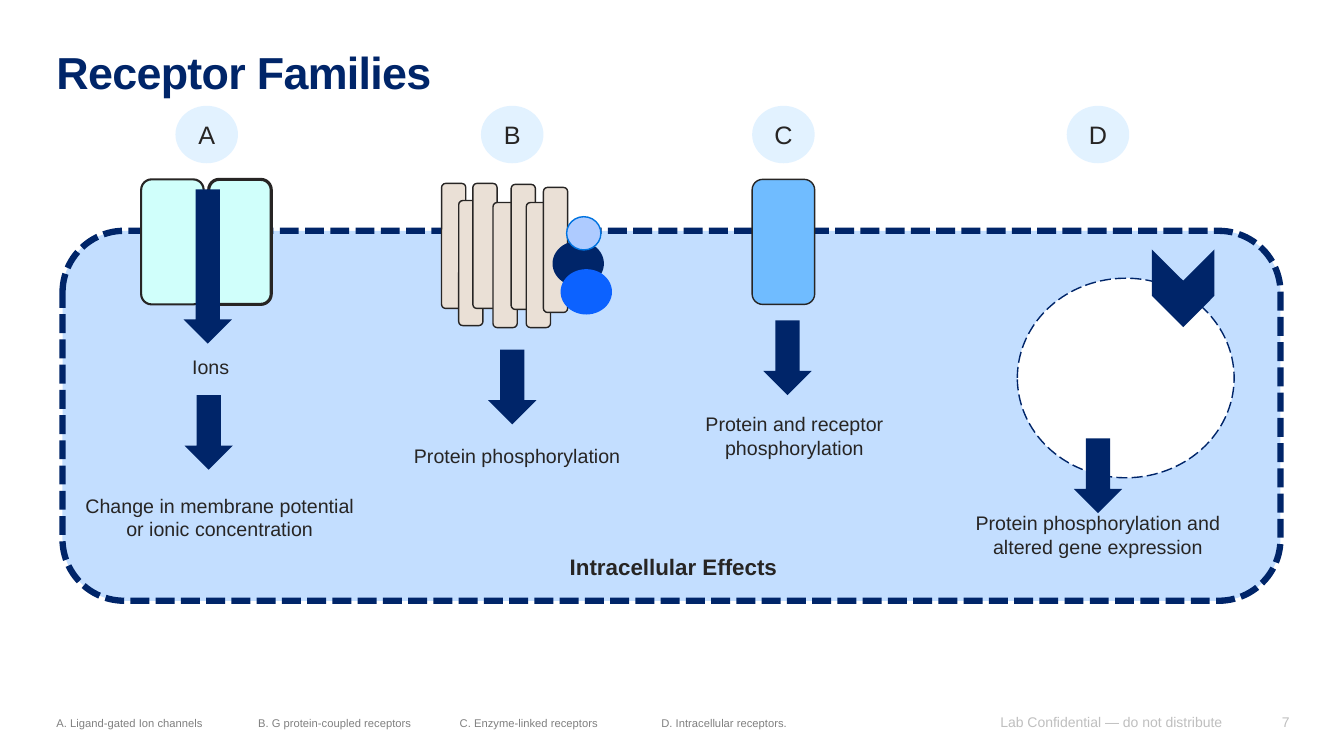
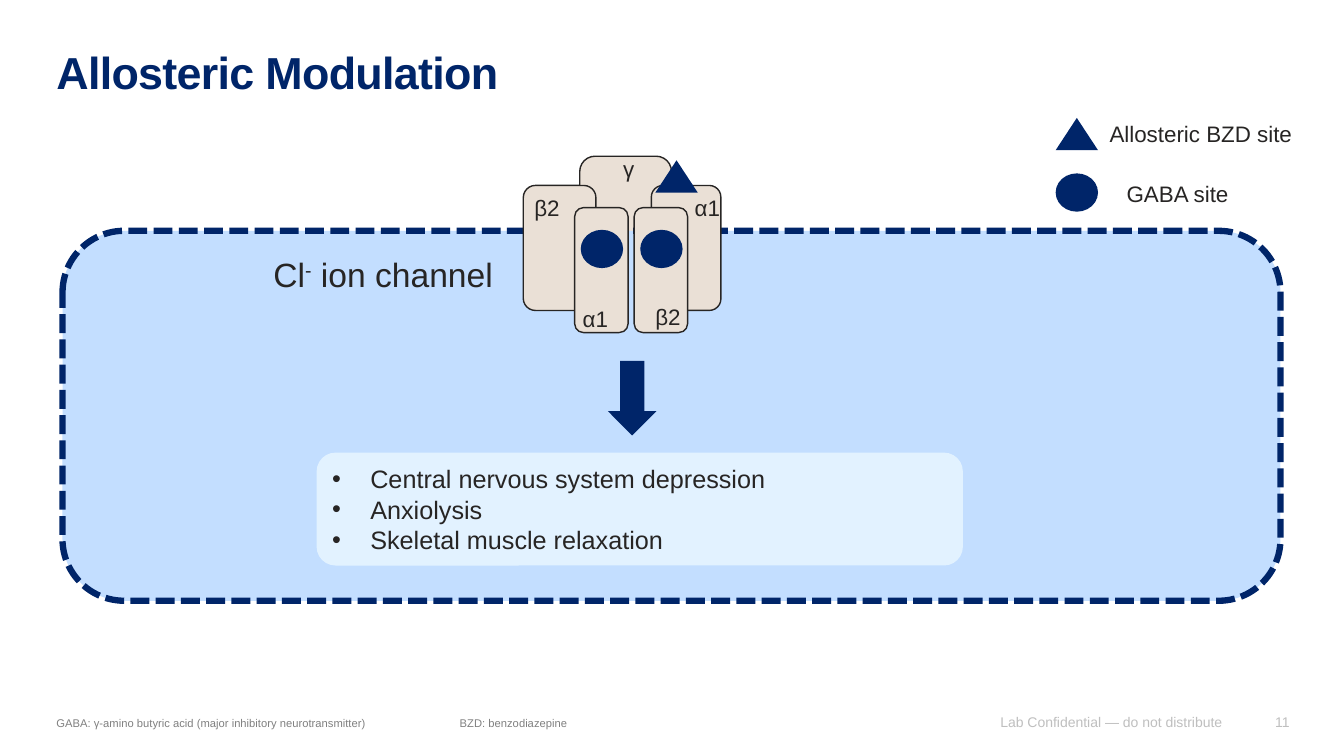
from dataclasses import dataclass

from lxml import etree
from pptx import Presentation
from pptx.dml.color import RGBColor
from pptx.enum import dml, shapes, text
from pptx.oxml import ns
from pptx.util import Inches, Pt

SHAPE = shapes.MSO_SHAPE
ALIGN = text.PP_ALIGN
ANCHOR = text.MSO_ANCHOR
DASH = dml.MSO_LINE


@dataclass(frozen=True)
class Theme:
    font: str = "Arial"
    navy: str = "002569"
    ink: str = "272524"
    cell: str = "C3DEFF"
    pale: str = "E2F2FF"
    beige: str = "EAE0D6"
    mint: str = "D0FFFB"
    sky: str = "70BCFF"
    blue: str = "0C62FF"
    periwinkle: str = "AECBFF"
    azure: str = "0073E0"
    white: str = "FFFFFF"
    note: str = "808080"
    footer: str = "BFBFBF"
    title_size: int = 32
    channel_size: int = 24
    body_size: int = 18
    label_size: int = 16
    effect_size: int = 14
    footer_size: int = 10
    note_size: int = 8


THEME = Theme()
SUBUNIT_HEIGHT = 1.24
CONFIDENTIAL = "Lab Confidential — do not distribute"


def rgb(value):
    return RGBColor.from_string(value)


def style_paragraph(paragraph, size, color=THEME.ink, align=ALIGN.LEFT, bold=False):
    paragraph.alignment = align
    font = paragraph.font
    font.name = THEME.font
    font.size = Pt(size)
    font.bold = bold
    font.color.rgb = rgb(color)


def add_part(slide, kind, left, top, width, height, fill, line=None, weight=1, dash=None):
    part = slide.shapes.add_shape(
        kind, Inches(left), Inches(top), Inches(width), Inches(height))
    part.shadow.inherit = False
    part.fill.solid()
    part.fill.fore_color.rgb = rgb(fill)
    if line is None:
        part.line.fill.background()
    else:
        part.line.color.rgb = rgb(line)
        part.line.width = Pt(weight)
        if dash is not None:
            part.line.dash_style = dash
    return part


def add_text(slide, left, top, width, height, words, size, color=THEME.ink,
             align=ALIGN.CENTER, bold=False, anchor=ANCHOR.TOP, inset=True):
    frame = slide.shapes.add_textbox(
        Inches(left), Inches(top), Inches(width), Inches(height)).text_frame
    frame.word_wrap = True
    frame.vertical_anchor = anchor
    if not inset:
        frame.margin_left = frame.margin_right = 0
        frame.margin_top = frame.margin_bottom = 0
    paragraph = frame.paragraphs[0]
    if words:
        paragraph.add_run().text = words
    style_paragraph(paragraph, size, color, align, bold)
    return paragraph


def add_title(slide, words):
    title = add_text(slide, 0.56, 0.5, 12.23, 1, words, THEME.title_size,
                     THEME.navy, ALIGN.LEFT, bold=True, inset=False)
    title.line_spacing = 0.9
    title.runs[0].font._element.set("spc", "-50")


def add_notes_line(slide, entries):
    left = 0.56
    note = add_text(slide, left, 6.97, 8.1, 0.27, "", THEME.note_size,
                    THEME.note, ALIGN.LEFT, anchor=ANCHOR.BOTTOM, inset=False)
    note.space_after = Pt(6)
    properties = note._p.get_or_add_pPr()
    tabs = etree.Element(ns.qn("a:tabLst"))
    for stop in (2, 4, 6):
        etree.SubElement(tabs, ns.qn("a:tab"), pos=str(Inches(stop)), algn="l")
    properties.find(ns.qn("a:defRPr")).addprevious(tabs)
    note.add_run().text = entries


def add_frame(slide, title, number, entries):
    for left, width, words in ((12.29, 0.5, number), (9.67, 2.45, CONFIDENTIAL)):
        add_text(slide, left, 6.98, width, 0.27, words, THEME.footer_size,
                 THEME.footer, ALIGN.RIGHT, anchor=ANCHOR.BOTTOM, inset=False)
    add_notes_line(slide, entries)
    add_title(slide, title)
    add_part(slide, SHAPE.ROUNDED_RECTANGLE, 0.62, 2.29, 12.08, 3.67,
             THEME.cell, THEME.navy, 4.5, DASH.SQUARE_DOT)


def add_subunit(slide, left, top, width, fill=THEME.beige, weight=1):
    add_part(slide, SHAPE.ROUNDED_RECTANGLE, left, top, width, SUBUNIT_HEIGHT,
             fill, THEME.ink, weight)


def add_arrow(slide, left, top, height=0.74):
    add_part(slide, SHAPE.DOWN_ARROW, left, top, 0.48, height, THEME.navy)


def add_effect(slide, center, top, words):
    width = 2.9
    add_text(slide, center - width / 2, top, width, 0.57, words, THEME.effect_size)


def add_badge(slide, left, letter):
    badge = add_part(slide, SHAPE.OVAL, left, 1.05, 0.62, 0.57, THEME.pale)
    frame = badge.text_frame
    frame.vertical_anchor = ANCHOR.MIDDLE
    frame.paragraphs[0].add_run().text = letter
    style_paragraph(frame.paragraphs[0], THEME.body_size, align=ALIGN.CENTER)


def add_bullets(slide, left, top, width, height, items):
    panel = add_part(slide, SHAPE.ROUNDED_RECTANGLE, left, top, width, height, THEME.pale)
    frame = panel.text_frame
    frame.word_wrap = True
    frame.vertical_anchor = ANCHOR.MIDDLE
    for index, item in enumerate(items):
        paragraph = frame.add_paragraph() if index else frame.paragraphs[0]
        properties = paragraph._p.get_or_add_pPr()
        properties.set("marL", str(Inches(0.38)))
        properties.set("indent", str(Inches(-0.38)))
        etree.SubElement(properties, ns.qn("a:buFont"), typeface=THEME.font)
        etree.SubElement(properties, ns.qn("a:buChar"), char="•")
        paragraph.add_run().text = item
        style_paragraph(paragraph, THEME.body_size)


def add_bzd_site(slide, left, top):
    add_part(slide, SHAPE.ISOSCELES_TRIANGLE, left, top, 0.42, 0.32, THEME.navy)


def add_gaba_site(slide, left, top):
    add_part(slide, SHAPE.OVAL, left, top, 0.42, 0.38, THEME.navy)


def add_g_protein_receptor(slide):
    helices = ((4.38, 1.82), (4.55, 1.99), (4.69, 1.82), (4.89, 2.01),
               (5.07, 1.83), (5.22, 2.01), (5.39, 1.86))
    for left, top in helices:
        add_subunit(slide, left, top, 0.24)
    add_part(slide, SHAPE.OVAL, 5.48, 2.39, 0.51, 0.45, THEME.navy)
    add_part(slide, SHAPE.OVAL, 5.56, 2.67, 0.51, 0.45, THEME.blue)
    add_part(slide, SHAPE.OVAL, 5.62, 2.15, 0.34, 0.33, THEME.periwinkle, THEME.azure)


def build_receptor_families(slide):
    add_frame(slide, "Receptor Families", "7",
              "A. Ligand-gated Ion channels\tB. G protein-coupled receptors"
              "\tC. Enzyme-linked receptors\tD. Intracellular receptors.")
    add_subunit(slide, 1.4, 1.78, 0.62, THEME.mint, 1.5)
    add_subunit(slide, 2.07, 1.78, 0.62, THEME.mint, 2.25)
    add_subunit(slide, 7.46, 1.78, 0.62, THEME.sky)
    add_g_protein_receptor(slide)
    add_part(slide, SHAPE.OVAL, 10.09, 2.76, 2.15, 1.98, THEME.white,
             THEME.navy, 1, DASH.LONG_DASH)
    ligand = add_part(slide, SHAPE.CHEVRON, 11.35, 2.55, 0.77, 0.62, THEME.navy)
    ligand.rotation = 90

    add_arrow(slide, 1.82, 1.88, 1.53)
    for left, top in ((1.83, 3.92), (4.84, 3.47), (7.57, 3.18), (10.65, 4.35)):
        add_arrow(slide, left, top)
    for left, letter in zip((1.74, 4.77, 7.46, 10.58), "ABCD"):
        add_badge(slide, left, letter)
    effects = (
        (2.09, 3.47, "Ions"),
        (2.18, 4.85, "Change in membrane potential or ionic concentration"),
        (5.13, 4.35, "Protein phosphorylation"),
        (7.88, 4.04, "Protein and receptor phosphorylation"),
        (10.89, 5.02, "Protein phosphorylation and altered gene expression"),
    )
    for center, top, words in effects:
        add_effect(slide, center, top, words)
    add_text(slide, 4.83, 5.44, 3.7, 0.37, "Intracellular Effects",
             THEME.label_size, bold=True)


def build_allosteric_modulation(slide):
    add_subunit(slide, 5.75, 1.55, 0.91)
    add_frame(slide, "Allosteric Modulation", "11",
              "GABA: γ-amino butyric acid (major inhibitory neurotransmitter)"
              "\tBZD: benzodiazepine")
    for left, top, width in ((5.19, 1.84, 0.72), (5.7, 2.06, 0.53),
                             (6.46, 1.84, 0.69), (6.29, 2.06, 0.53)):
        add_subunit(slide, left, top, width)
    add_arrow(slide, 6.03, 3.58)

    channel = add_text(slide, 2.37, 2.47, 2.86, 0.5, "Cl", THEME.channel_size)
    charge = channel.add_run()
    charge.text = "-"
    charge.font._element.set("baseline", "30000")
    channel.add_run().text = " ion channel"

    for left, top in ((6.5, 1.59), (10.47, 1.17)):
        add_bzd_site(slide, left, top)
    for left, top in ((6.35, 2.28), (5.76, 2.28), (10.47, 1.72)):
        add_gaba_site(slide, left, top)
    add_bullets(slide, 3.14, 4.49, 6.41, 1.12,
                ("Central nervous system depression", "Anxiolysis",
                 "Skeletal muscle relaxation"))
    labels = (
        (10.89, 1.14, 2.04, "Allosteric BZD site"),
        (10.66, 1.74, 2.04, "GABA site"),
        (6.28, 2.96, 0.69, "β2"),
        (5.08, 1.88, 0.69, "β2"),
        (5.56, 2.98, 0.69, "α1"),
        (6.67, 1.88, 0.69, "α1"),
        (5.89, 1.49, 0.69, "γ"),
    )
    for left, top, width, words in labels:
        add_text(slide, left, top, width, 0.37, words, THEME.label_size)


def main():
    deck = Presentation()
    deck.slide_width = Inches(13.33)
    deck.slide_height = Inches(7.5)
    blank = deck.slide_layouts[6]
    for build in (build_receptor_families, build_allosteric_modulation):
        build(deck.slides.add_slide(blank))
    deck.save("out.pptx")


if __name__ == "__main__":
    main()
